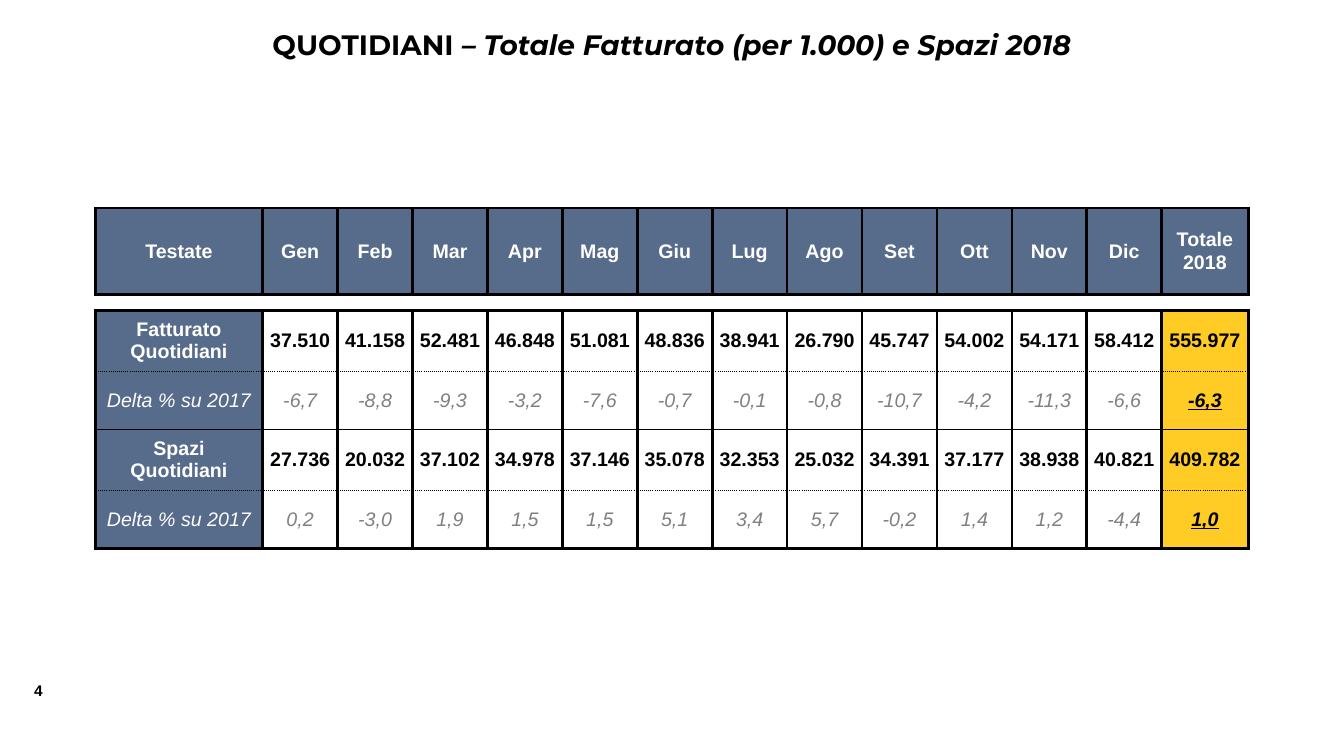
import pptx
import pptx.util
import pptx.dml.color
import pptx.enum.text
from lxml import etree
from pptx.oxml.ns import qn
from pptx.util import Cm, Pt

HUES = {"ink": "000000", "blue": "576B8A", "gold": "FFCB25",
        "grey": "808080", "white": "FFFFFF"}
HEAD = "Testate Gen Feb Mar Apr Mag Giu Lug Ago Set Ott Nov Dic".split() + ["Totale\n2018"]
ROWS = [
    ("Fatturato Quotidiani", "37.510 41.158 52.481 46.848 51.081 48.836 38.941 "
     "26.790 45.747 54.002 54.171 58.412 555.977"),
    ("Delta % su 2017", "-6,7 -8,8 -9,3 -3,2 -7,6 -0,7 -0,1 -0,8 -10,7 -4,2 -11,3 -6,6 -6,3"),
    ("Spazi Quotidiani", "27.736 20.032 37.102 34.978 37.146 35.078 32.353 "
     "25.032 34.391 37.177 38.938 40.821 409.782"),
    ("Delta % su 2017", "0,2 -3,0 1,9 1,5 1,5 5,1 3,4 5,7 -0,2 1,4 1,2 -4,4 1,0"),
]
THICK, THIN, DOTS, NONE = (2.25, "solid"), (1, "solid"), (1, "sysDot"), None
# Horizontal rules, from the top of the header to the foot of the table
RULES = [THICK, THICK, THICK, DOTS, THIN, DOTS, THICK]
MID = pptx.enum.text.PP_ALIGN.CENTER


def rgb(hue):
    return pptx.dml.color.RGBColor.from_string(HUES[hue])


def style(run, size, hue, face="Arial", bold=True, slant=False):
    font = run.font
    font.name, font.size, font.bold, font.italic = face, Pt(size), bold, slant
    font.color.rgb = rgb(hue)


def edge(cell, sides):
    """Draw the left, right, top and bottom borders, in that order."""
    props = cell._tc.get_or_add_tcPr()
    for spot, (tag, rule) in enumerate(zip(("lnL", "lnR", "lnT", "lnB"), sides)):
        line = etree.Element(qn("a:" + tag))
        if rule is NONE:
            etree.SubElement(line, qn("a:noFill"))
        else:
            line.set("w", str(Pt(rule[0])))
            paint = etree.SubElement(line, qn("a:solidFill"))
            etree.SubElement(paint, qn("a:srgbClr"), val=HUES["ink"])
            etree.SubElement(line, qn("a:prstDash"), val=rule[1])
        props.insert(spot, line)


def fill(cell, text, back, hue, bold=True, slant=False, under=False, tight=False):
    if back:
        cell.fill.solid()
        cell.fill.fore_color.rgb = rgb(back)
    else:
        cell.fill.background()
    cell.vertical_anchor = pptx.enum.text.MSO_ANCHOR.MIDDLE
    if tight:
        cell.margin_left = cell.margin_right = cell.margin_top = cell.margin_bottom = 0
    cell.text_frame.text = text
    for para in cell.text_frame.paragraphs:
        para.alignment = MID
        for run in para.runs:
            style(run, 14, hue, bold=bold, slant=slant)
            run.font.underline = under


def spacer(cell):
    """Empty a cell of the gap row and keep it low."""
    fill(cell, "", None, "ink", tight=True)
    etree.SubElement(cell.text_frame.paragraphs[0]._p, qn("a:endParaRPr"), sz="400")


def title(slide, left, top, width, height):
    frame = slide.shapes.add_textbox(left, top, width, height).text_frame
    frame.word_wrap = True
    para = frame.paragraphs[0]
    para.alignment = MID
    for text, slant in (("QUOTIDIANI ", False),
                        ("– Totale Fatturato (per 1.000) e Spazi 2018", True)):
        run = para.add_run()
        run.text = text
        style(run, 20, "ink", "Montserrat", slant=slant)


def number(slide, left, top, width, height):
    frame = slide.shapes.add_textbox(left, top, width, height).text_frame
    frame.word_wrap = True
    frame.text = "4"
    style(frame.paragraphs[0].runs[0], 11, "ink")


def grid(slide, left, top, width, height):
    table = slide.shapes.add_table(len(ROWS) + 2, len(HEAD), left, top, width, height).table
    table.first_row = table.horz_banding = False
    first, last = Cm(4.22), Cm(2.18)
    month = (width - first - last) // 12
    for col, size in zip(table.columns, [first] + [month] * 12 + [last]):
        col.width = size
    for row, size in zip(table.rows, (2.18, 0.4, 1.55, 1.45, 1.55, 1.45)):
        row.height = Cm(size)

    end = len(HEAD) - 1
    for c, name in enumerate(HEAD):
        fill(table.cell(0, c), name, "blue", "white")
        spacer(table.cell(1, c))
        for r, (label, values) in enumerate(ROWS, 2):
            cell, delta = table.cell(r, c), r % 2 == 1
            if c == 0:
                fill(cell, label, "blue", "white", not delta, delta)
            elif c == end:
                fill(cell, values.split()[-1], "gold", "ink", True, delta, delta, True)
            else:
                fill(cell, values.split()[c - 1], None, "grey" if delta else "ink",
                     not delta, delta, tight=True)
        for r in range(len(table.rows)):
            side = NONE if r == 1 else THICK
            edge(table.cell(r, c), (side, side, RULES[r], RULES[r + 1]))


def main():
    deck = pptx.Presentation()
    deck.slide_width, deck.slide_height = Cm(33.87), Cm(19.05)
    slide = deck.slides.add_slide(deck.slide_layouts[6])
    number(slide, Cm(0.61), Cm(17.04), Cm(1.07), Cm(0.74))
    title(slide, Cm(4.23), Cm(0.58), Cm(25.4), Cm(1.11))
    grid(slide, Cm(2.4), Cm(5.24), Cm(29.06), Cm(8.58))
    deck.save("out.pptx")


if __name__ == "__main__":
    main()
